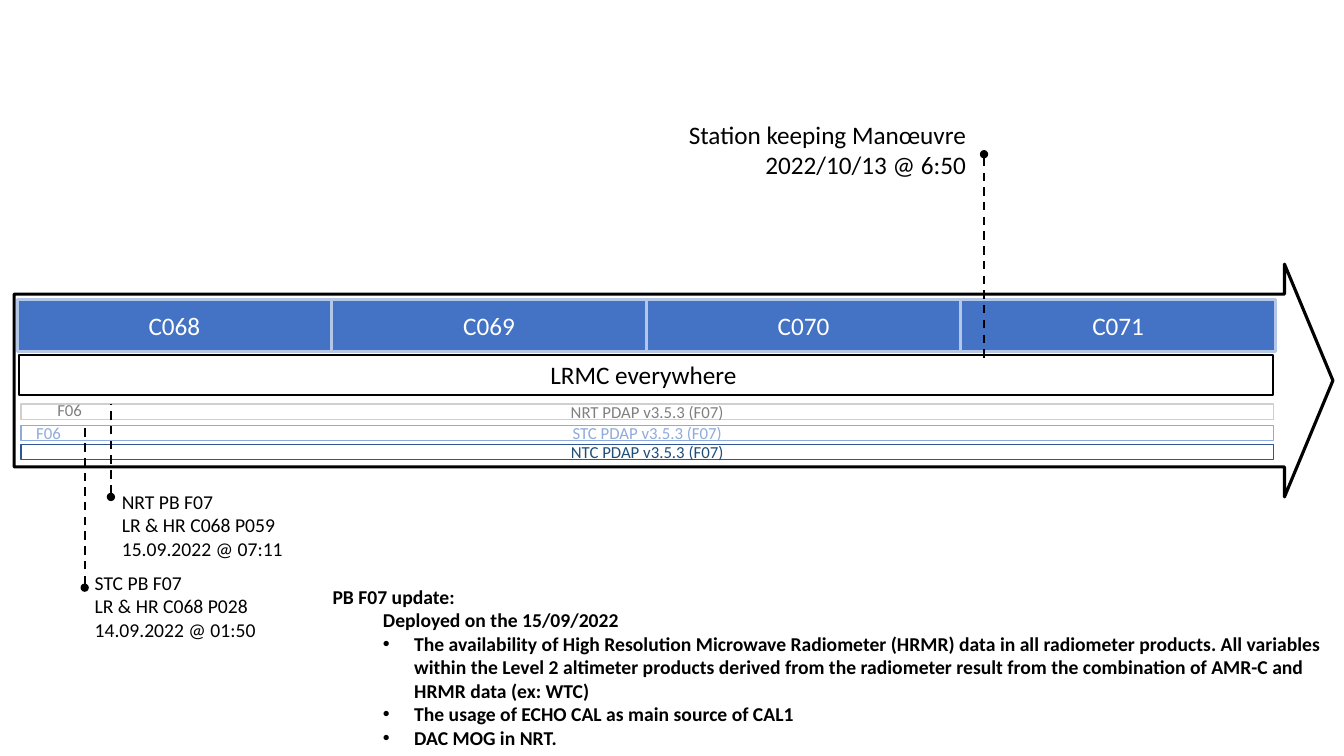
from lxml.etree import SubElement
from pptx import Presentation
from pptx.dml.color import RGBColor
from pptx.enum.dml import MSO_LINE
from pptx.enum.shapes import MSO_CONNECTOR, MSO_SHAPE
from pptx.enum.text import MSO_ANCHOR as ANCHOR, PP_ALIGN as ALIGN
from pptx.oxml.ns import qn
from pptx.util import Inches, Pt

FONT = "Calibri"
BLACK, WHITE = "000000", "FFFFFF"
NRT_GREY, STC_BLUE = "808080", "8FAADC"
CYCLES = ["C068", "C069", "C070", "C071"]
PRODUCTS = [
    ("NRT PDAP v3.5.3 (F07)", 1.39, "D0CECE", NRT_GREY),
    ("STC PDAP v3.5.3 (F07)", 1.6, STC_BLUE, STC_BLUE),
    ("NTC PDAP v3.5.3 (F07)", 1.79, "2F5597", "1F4E79"),
]
UPDATE_HEADING = "PB F07 update:"
UPDATE_DATE = "Deployed on the 15/09/2022"
UPDATE_ITEMS = [
    "The availability of High Resolution Microwave Radiometer (HRMR) data in all "
    "radiometer products. All variables within the Level 2 altimeter products derived "
    "from the radiometer result from the combination of AMR-C and HRMR data (ex: WTC)",
    "The usage of ECHO CAL as main source of CAL1",
    "DAC MOG in NRT.",
]


def rgb(value):
    """Turn a hex string into a colour."""
    return RGBColor.from_string(value)


def write(frame, lines, size, color, align=ALIGN.LEFT, bold=False):
    """Fill a text frame with one formatted paragraph per line."""
    frame.word_wrap = True
    frame.text = "\n".join(lines)
    for paragraph in frame.paragraphs:
        paragraph.alignment = align
        for run in paragraph.runs:
            run.font.name = FONT
            run.font.size = Pt(size)
            run.font.bold = bold
            run.font.color.rgb = rgb(color)


def add_label(slide, box, lines, size, color=BLACK, align=ALIGN.LEFT, bold=False):
    """Add a text box and return its frame."""
    label = slide.shapes.add_textbox(*map(Inches, box))
    write(label.text_frame, lines, size, color, align, bold)
    return label.text_frame


def add_block(slide, box, fill, outline, weight, kind=MSO_SHAPE.RECTANGLE):
    """Add an outlined preset shape without a shadow."""
    block = slide.shapes.add_shape(kind, *map(Inches, box))
    block.shadow.inherit = False
    block.fill.solid()
    block.fill.fore_color.rgb = rgb(fill)
    block.line.color.rgb = rgb(outline)
    block.line.width = Pt(weight)
    return block


def add_marker(slide, x, dot_y, end_y):
    """Add a dashed vertical line that starts with a dot."""
    marker = slide.shapes.add_connector(
        MSO_CONNECTOR.STRAIGHT, *map(Inches, (x, dot_y, x, end_y)))
    marker.line.color.rgb = rgb(BLACK)
    marker.line.width = Pt(1.5)
    marker.line.dash_style = MSO_LINE.DASH
    SubElement(marker.line._get_or_add_ln(), qn("a:headEnd"), type="oval")
    SubElement(marker._element.spPr, qn("a:effectLst"))


def add_timeline(slide, box):
    """Draw the arrow with its cycles, mode bar and product bars."""
    left, top, width, height = box
    arrow = add_block(slide, box, WHITE, BLACK, 2.25, MSO_SHAPE.RIGHT_ARROW)
    arrow.adjustments[0] = 0.742
    arrow.adjustments[1] = 0.208

    cycle_width = 3.12
    for index, cycle in enumerate(CYCLES):
        cell_box = (left + 0.03 + index * cycle_width, top + 0.35, cycle_width, 0.52)
        cell = add_block(slide, cell_box, "4472C4", "B4C7E7", 2.25)
        write(cell.text_frame, [cycle], 18, WHITE, ALIGN.CENTER)

    mode = add_block(slide, (left + 0.05, top + 0.9, width - 0.64, 0.4), WHITE, BLACK, 1.5)
    write(mode.text_frame, ["LRMC everywhere "], 18, BLACK, ALIGN.CENTER)
    mode.text_frame.vertical_anchor = ANCHOR.TOP

    for name, offset, outline, color in PRODUCTS:
        bar_box = (left + 0.07, top + offset, width - 0.66, 0.15)
        bar = add_block(slide, bar_box, WHITE, outline, 1)
        write(bar.text_frame, [name], 12, color, ALIGN.CENTER)

    add_label(slide, (left + 0.33, top + 1.3, 0.6, 0.3), ["F06"], 12, NRT_GREY)
    add_label(slide, (left + 0.12, top + 1.52, 0.6, 0.3), ["F06"], 12, STC_BLUE)


def add_deployment(slide, box, lines, x, dot_y, end_y):
    """Add a processing baseline note and its marker."""
    add_label(slide, box, lines, 14)
    add_marker(slide, x, dot_y, end_y)


def add_manoeuvre(slide, box):
    """Add the manoeuvre note with its marker to the right."""
    left, top, width, _ = box
    lines = ["Station keeping Manœuvre", "2022/10/13 @ 6:50"]
    add_label(slide, box, lines, 18, align=ALIGN.RIGHT)
    add_marker(slide, left + width + 0.08, top + 0.4, top + 2.42)


def add_update(slide, box):
    """Add the baseline update with its indented date and bullets."""
    frame = add_label(
        slide, box, [UPDATE_HEADING, UPDATE_DATE, *UPDATE_ITEMS], 14, bold=True)
    _, date, *items = frame.paragraphs
    for paragraph in (date, *items):
        paragraph.level = 1
        paragraph._p.get_or_add_pPr().set("marL", str(Inches(0.5)))
    for item in items:
        properties = item._p.get_or_add_pPr()
        properties.set("marL", str(Inches(0.81)))
        properties.set("indent", str(Inches(-0.31)))
        SubElement(properties, qn("a:buFont"), typeface="Arial")
        SubElement(properties, qn("a:buChar"), char="•")


def main():
    """Build and save the slide."""
    deck = Presentation()
    deck.slide_width = Inches(13.33)
    deck.slide_height = Inches(7.5)
    slide = deck.slides.add_slide(deck.slide_layouts[6])
    add_timeline(slide, (0.14, 2.62, 13.08, 2.31))
    add_update(slide, (3.2, 5.75, 10.26, 1.75))
    add_deployment(slide, (1.11, 4.81, 2.18, 0.81),
                   ["NRT PB F07", "LR & HR C068 P059", "15.09.2022 @ 07:11"],
                   1.1, 4.93, 4.01)
    add_deployment(slide, (0.84, 5.61, 2.18, 0.81),
                   ["STC PB F07", "LR & HR C068 P028", "14.09.2022 @ 01:50"],
                   0.84, 5.83, 4.22)
    add_manoeuvre(slide, (6.43, 1.13, 3.25, 0.71))
    deck.save("out.pptx")


if __name__ == "__main__":
    main()
